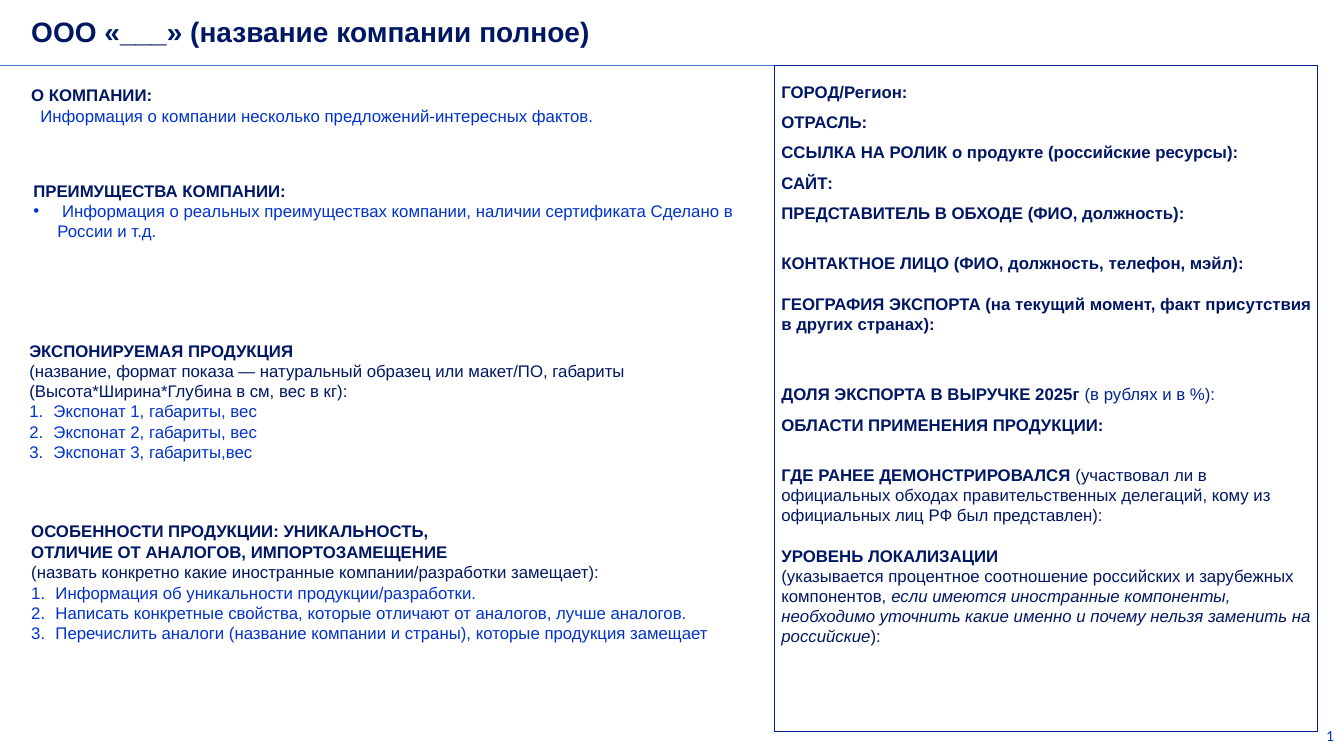
import pptx
import pptx.util
import pptx.dml.color
import pptx.enum.text
import pptx.enum.shapes
import lxml.etree

Inches, Pt = pptx.util.Inches, pptx.util.Pt
ALIGN, ANCHOR = pptx.enum.text.PP_ALIGN, pptx.enum.text.MSO_ANCHOR
NAVY, BLUE, ROYAL = "001764", "0033CC", "002395"
NS = "{http://schemas.openxmlformats.org/drawingml/2006/main}"
LINE, WIDE = 14.4, 21.6

# Run styles
HEAD = {"bold": True, "color": NAVY}
NOTE = {"bold": False, "color": NAVY}
TONE = {"bold": False, "color": ROYAL}
ITAL = {"bold": False, "color": NAVY, "italic": True}
INFO = {"bold": False, "color": BLUE}


def rgb(code):
    return pptx.dml.color.RGBColor.from_string(code)


def put(target, values):
    for name, value in values.items():
        setattr(target, name, value)


def setup(shape, inset=(0, 0, 0, 0), anchor=ANCHOR.TOP):
    frame = shape.text_frame
    sides = ("margin_left", "margin_top", "margin_right", "margin_bottom")
    put(frame, dict(zip(sides, map(Inches, inset))))
    put(frame, {"word_wrap": True, "vertical_anchor": anchor,
                "auto_size": pptx.enum.text.MSO_AUTO_SIZE.NONE})
    return frame


def place(shape, left, top, width, height):
    put(shape, {"left": Inches(left), "top": Inches(top),
                "width": Inches(width), "height": Inches(height)})


def add_run(par, text, style, size=12, face="Arial"):
    for num, part in enumerate(text.split("\n")):
        if num:
            par.add_line_break()
        if part:
            run = par.add_run()
            run.text = part
            font = {"size": Pt(size), "name": face, **style}
            run.font.color.rgb = rgb(font.pop("color"))
            put(run.font, font)


def mark(par, kind, left):
    """Set the indent and the bullet of a paragraph."""
    props = par._p.get_or_add_pPr()
    hang = -left if kind else 0
    props.set("marL", str(Inches(left)))
    props.set("indent", str(Inches(hang)))
    if kind == "num":
        lxml.etree.SubElement(props, NS + "buAutoNum", type="arabicPeriod")
    elif kind:
        lxml.etree.SubElement(props, NS + "buChar", char=kind)
    else:
        lxml.etree.SubElement(props, NS + "buNone")


def fill(frame, rows):
    """Each row: runs, line pitch, gap before, bullet kind, indent."""
    for num, (runs, pitch, gap, kind, left) in enumerate(rows):
        par = frame.add_paragraph() if num else frame.paragraphs[0]
        mark(par, kind, left)
        put(par, {"line_spacing": Pt(pitch), "space_before": Pt(gap),
                  "space_after": Pt(0), "alignment": ALIGN.LEFT})
        for text, style in runs:
            add_run(par, text, style)


def row(*runs, pitch=LINE, gap=0, kind=None, left=0):
    return runs, pitch, gap, kind, left


def items(kind, *texts):
    return [row((text, INFO), kind=kind, left=0.24) for text in texts]


def add_title(slide):
    title = slide.shapes.title
    place(title, 0.31, 0.13, 6.52, 0.53)
    par = setup(title, (0, 0.05, 0.1, 0.05)).paragraphs[0]
    put(par, {"alignment": ALIGN.LEFT, "line_spacing": 0.9})
    add_run(par, "ООО «___» (название компании полное)", HEAD, 20)


def add_panel(slide):
    # Frame and header rule
    box = slide.shapes.add_shape(pptx.enum.shapes.MSO_SHAPE.RECTANGLE, 0, 0, 0, 0)
    place(box, 7.68, 0.65, 5.39, 6.61)
    box.shadow.inherit = False
    box.fill.background()
    rule = slide.shapes.add_connector(
        pptx.enum.shapes.MSO_CONNECTOR.STRAIGHT,
        Inches(7.68), Inches(0.65), Inches(0), Inches(0.65))
    lxml.etree.SubElement(rule._element.spPr, NS + "effectLst")
    for shape, color in ((box, ROYAL), (rule, "4472C4")):
        shape.line.color.rgb = rgb(color)
        shape.line.width = Pt(1)


def add_text(slide, *area):
    return slide.shapes.add_textbox(*map(Inches, area))


def add_facts(slide):
    rows = [
        row(("ГОРОД/Регион:", HEAD), pitch=WIDE),
        row(("ОТРАСЛЬ:\nССЫЛКА НА РОЛИК о продукте (российские ресурсы):", HEAD), pitch=WIDE),
        row(("САЙТ:", HEAD), pitch=WIDE),
        row(("ПРЕДСТАВИТЕЛЬ В ОБХОДЕ (ФИО, должность):", HEAD), pitch=WIDE),
        row(("КОНТАКТНОЕ ЛИЦО (ФИО, должность, телефон, мэйл):", HEAD), gap=WIDE),
        row(("ГЕОГРАФИЯ ЭКСПОРТА (на текущий момент, факт присутствия в других странах):",
             HEAD), gap=LINE),
        row(("ДОЛЯ ЭКСПОРТА В ВЫРУЧКЕ 2025г ", HEAD), ("(в рублях и в %):", TONE),
            pitch=WIDE, gap=2 * LINE),
        row(("ОБЛАСТИ ПРИМЕНЕНИЯ ПРОДУКЦИИ:", HEAD), pitch=WIDE),
        row(("ГДЕ РАНЕЕ ДЕМОНСТРИРОВАЛСЯ ", HEAD),
            ("(участвовал ли в официальных обходах правительственных делегаций, "
             "кому из официальных лиц РФ был представлен):", NOTE), gap=WIDE),
        row(("УРОВЕНЬ ЛОКАЛИЗАЦИИ\n", HEAD),
            ("(указывается процентное соотношение российских и зарубежных компонентов, ", NOTE),
            ("если имеются иностранные компоненты, необходимо уточнить какие именно "
             "и почему нельзя заменить на российские", ITAL),
            ("):", NOTE), gap=LINE),
    ]
    fill(setup(add_text(slide, 7.75, 0.71, 5.28, 6.55)), rows)


def add_parts(slide):
    parts = [
        ((0.31, 0.86, 7.29, 0.89), [
            row(("О КОМПАНИИ:", HEAD), pitch=13),
            row(("Информация о компании несколько предложений-интересных фактов.", INFO),
                pitch=15, left=0.09)]),
        ((0.33, 1.79, 7.24, 1.41), [
            row(("ПРЕИМУЩЕСТВА КОМПАНИИ:", HEAD)),
            *items("•", " Информация о реальных преимуществах компании, "
                   "наличии сертификата Сделано в России и т.д.")]),
        ((0.29, 3.38, 7.24, 1.41), [
            row(("ЭКСПОНИРУЕМАЯ ПРОДУКЦИЯ\n", HEAD),
                ("(название, формат показа — натуральный образец или макет/ПО, габариты "
                 "(Высота*Ширина*Глубина в см, вес в кг):", NOTE)),
            *items("num", "Экспонат 1, габариты, вес", "Экспонат 2, габариты, вес",
                   "Экспонат 3, габариты,вес")]),
        ((0.31, 5.16, 7.24, 1.81), [
            row(("ОСОБЕННОСТИ ПРОДУКЦИИ: УНИКАЛЬНОСТЬ,\n"
                 "ОТЛИЧИЕ ОТ АНАЛОГОВ, ИМПОРТОЗАМЕЩЕНИЕ\n", HEAD),
                ("(назвать конкретно какие иностранные компании/разработки замещает):", NOTE),
                pitch=14.8),
            *items("num", "Информация об уникальности продукции/разработки.",
                   "Написать конкретные свойства, которые отличают от аналогов, лучше аналогов.",
                   "Перечислить аналоги (название компании и страны), "
                   "которые продукция замещает")]),
    ]
    for idx, (area, rows) in enumerate(parts, 1):
        body = slide.placeholders[idx]
        place(body, *area)
        fill(setup(body), rows)


def add_page(slide):
    box = add_text(slide, 10.33, 7.1, 3, 0.4)
    par = setup(box, (0.1, 0.05, 0.1, 0.05), ANCHOR.MIDDLE).paragraphs[0]
    par.alignment = ALIGN.RIGHT
    add_run(par, "1", INFO, 11, "Calibri")


def main():
    deck = pptx.Presentation()
    put(deck, {"slide_width": Inches(13.33), "slide_height": Inches(7.5)})
    # The comparison layout has a title and four bodies
    slide = deck.slides.add_slide(deck.slide_layouts[4])
    for step in (add_panel, add_facts, add_title, add_parts, add_page):
        step(slide)
    deck.save("out.pptx")


if __name__ == "__main__":
    main()
